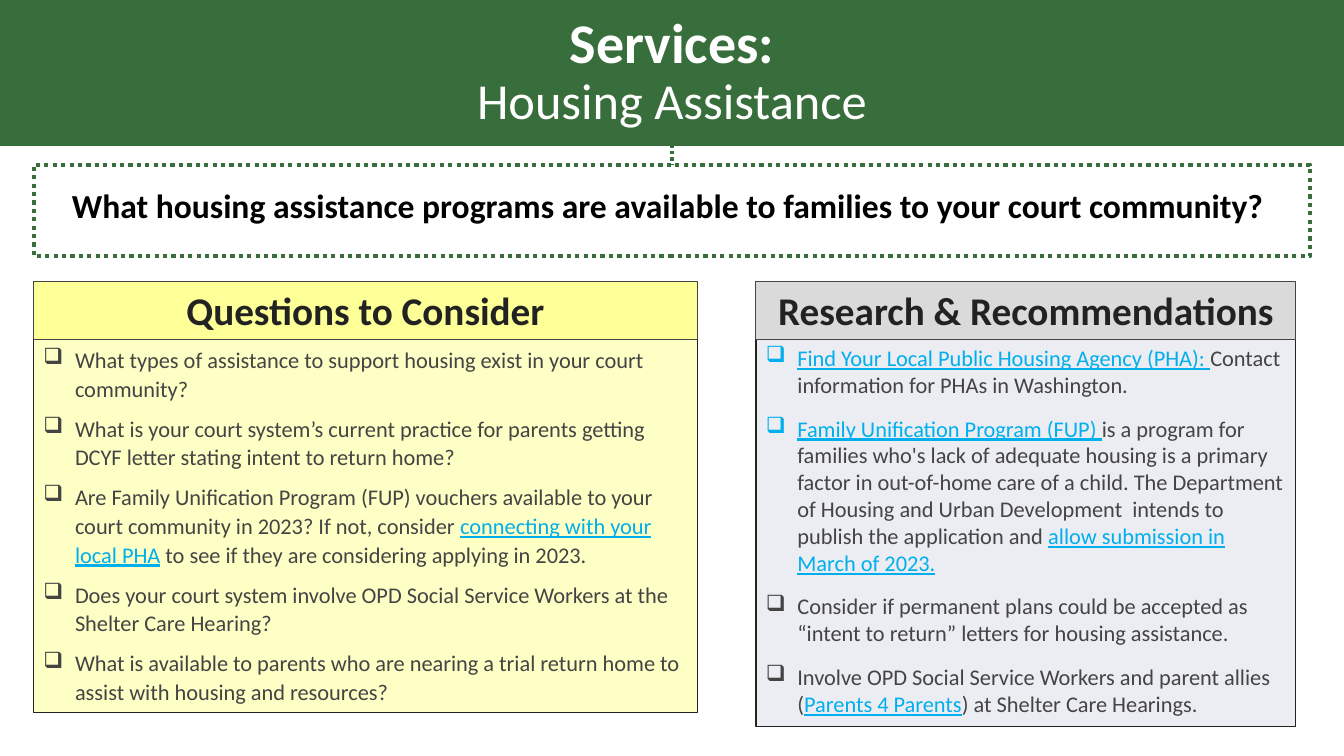
from pptx import Presentation
from pptx.dml.color import RGBColor
from pptx.enum.dml import MSO_LINE
from pptx.enum.shapes import MSO_CONNECTOR, MSO_SHAPE
from pptx.enum.text import MSO_ANCHOR, PP_ALIGN
from pptx.oxml.ns import qn
from pptx.util import Pt
from lxml import etree

PX = 9525  # EMU per px, 96 px to the inch
FONT = "Calibri"
RECTANGLE = MSO_SHAPE.RECTANGLE
STRAIGHT = MSO_CONNECTOR.STRAIGHT
DOTTED = MSO_LINE.ROUND_DOT
TOP, MIDDLE = MSO_ANCHOR.TOP, MSO_ANCHOR.MIDDLE
LEFT, CENTER = PP_ALIGN.LEFT, PP_ALIGN.CENTER
COLORS = {
    "green": "386D3C", "white": "FFFFFF", "black": "000000",
    "ink": "222222", "text": "444444", "link": "00AFEC",
    "yellow": "FDFF97", "pale yellow": "FEFFC5",
    "gray": "DADADA", "pale gray": "EBEDF3",
}

deck = Presentation()
deck.slide_width, deck.slide_height = 1280 * PX, 720 * PX
page = deck.slides.add_slide(deck.slide_layouts[6])


def add_box(left, top, width, height, fill=None, line=None, weight=0.75, anchor=TOP):
    box = page.shapes.add_shape(RECTANGLE, left * PX, top * PX, width * PX, height * PX)
    box.shadow.inherit = False
    if fill:
        box.fill.solid()
        box.fill.fore_color.rgb = RGBColor.from_string(COLORS[fill])
    else:
        box.fill.background()
    if line:
        box.line.color.rgb = RGBColor.from_string(COLORS[line])
        box.line.width = Pt(weight)
    else:
        box.line.fill.background()
    box.text_frame.word_wrap = True
    box.text_frame.vertical_anchor = anchor
    return box


def add_span(para, text, size, color, bold=False):
    span = para.add_run()
    span.text = text
    span.font.name, span.font.size, span.font.bold = FONT, Pt(size), bold
    span.font.color.rgb = RGBColor.from_string(COLORS[color])
    span.font.underline = color == "link"


# Title band
band = add_box(0, 0, 1280, 139, fill="green", anchor=MIDDLE)
titles = [("Services:", 40, True), ("Housing Assistance", 36, False)]
for index, (text, size, bold) in enumerate(titles):
    para = band.text_frame.add_paragraph() if index else band.text_frame.paragraphs[0]
    para.alignment, para.line_spacing = CENTER, 0.9
    add_span(para, text, size, "white", bold)

# Key question in a dotted frame, tied to the band
frame = add_box(32, 157, 1216, 87, line="green", weight=3)
frame.line.dash_style = DOTTED
tie = page.shapes.add_connector(STRAIGHT, 640 * PX, 132 * PX, 640 * PX, 157 * PX)
tie.line.color.rgb = RGBColor.from_string(COLORS["green"])
tie.line.width = Pt(2.25)
tie.line.dash_style = DOTTED
etree.SubElement(tie.element.spPr, qn("a:effectLst"))

question = page.shapes.add_textbox(24 * PX, 171 * PX, 1224 * PX, 48 * PX)
question.text_frame.word_wrap = True
para = question.text_frame.paragraphs[0]
para.alignment = CENTER
add_span(para, "What housing assistance programs are available to families to your court community?",
         24, "black", True)

# Checklists: each item is a list of (color, text) runs
questions = [
    [("text", "What types of assistance to support housing exist in your court community?")],
    [("text", "What is your court system’s current practice for parents getting DCYF letter "
              "stating intent to return home?")],
    [("text", "Are Family Unification Program (FUP) vouchers available to your court community "
              "in 2023? If not, consider "),
     ("link", "connecting with your local PHA"),
     ("text", " to see if they are considering applying in 2023.")],
    [("text", "Does your court system involve OPD Social Service Workers at the "
              "Shelter Care Hearing?")],
    [("text", "What is available to parents who are nearing a trial return home to assist "
              "with housing and resources?")],
]
recommendations = [
    [("link", "Find Your Local Public Housing Agency (PHA): "),
     ("text", "Contact information for PHAs in Washington.")],
    [("link", "Family Unification Program (FUP) "),
     ("text", "is a program for families who's lack of adequate housing is a primary factor in "
              "out-of-home care of a child. The Department of Housing and Urban Development  "
              "intends to publish the application and "),
     ("link", "allow submission in March of 2023.")],
    [("text", "Consider if permanent plans could be accepted as “intent to return” letters "
              "for housing assistance.")],
    [("text", "Involve OPD Social Service Workers and parent allies ("),
     ("link", "Parents 4 Parents"),
     ("text", ") at Shelter Care Hearings.")],
]

# Panels: heading, items, left, width, body height, fills, border, line spacing, gap
panels = [
    ("Questions to Consider", questions, 32, 632, 356,
     "yellow", "pale yellow", 0.75, 1.07, 8),
    ("Research & Recommendations", recommendations, 720, 514, 369,
     "gray", "pale gray", 1, 1.0, 12),
]
HEAD_TOP, HEAD_HEIGHT, INDENT = 268, 55, 30
for heading, items, left, width, height, head_fill, body_fill, border, spacing, gap in panels:
    body = add_box(left, HEAD_TOP + HEAD_HEIGHT, width, height, body_fill, "ink", border)
    for index, runs in enumerate(items):
        para = body.text_frame.add_paragraph() if index else body.text_frame.paragraphs[0]
        para.alignment, para.line_spacing, para.space_after = LEFT, spacing, Pt(gap)
        props = para._p.get_or_add_pPr()
        props.set("marL", str(INDENT * PX))
        props.set("indent", str(-INDENT * PX))
        etree.SubElement(props, qn("a:buChar")).set("char", "❑")
        for color, text in runs:
            add_span(para, text, 16, color)

    head = add_box(left, HEAD_TOP, width, HEAD_HEIGHT, head_fill, "text")
    para = head.text_frame.paragraphs[0]
    para.alignment = CENTER
    add_span(para, heading, 28, "ink", True)

deck.save("out.pptx")
